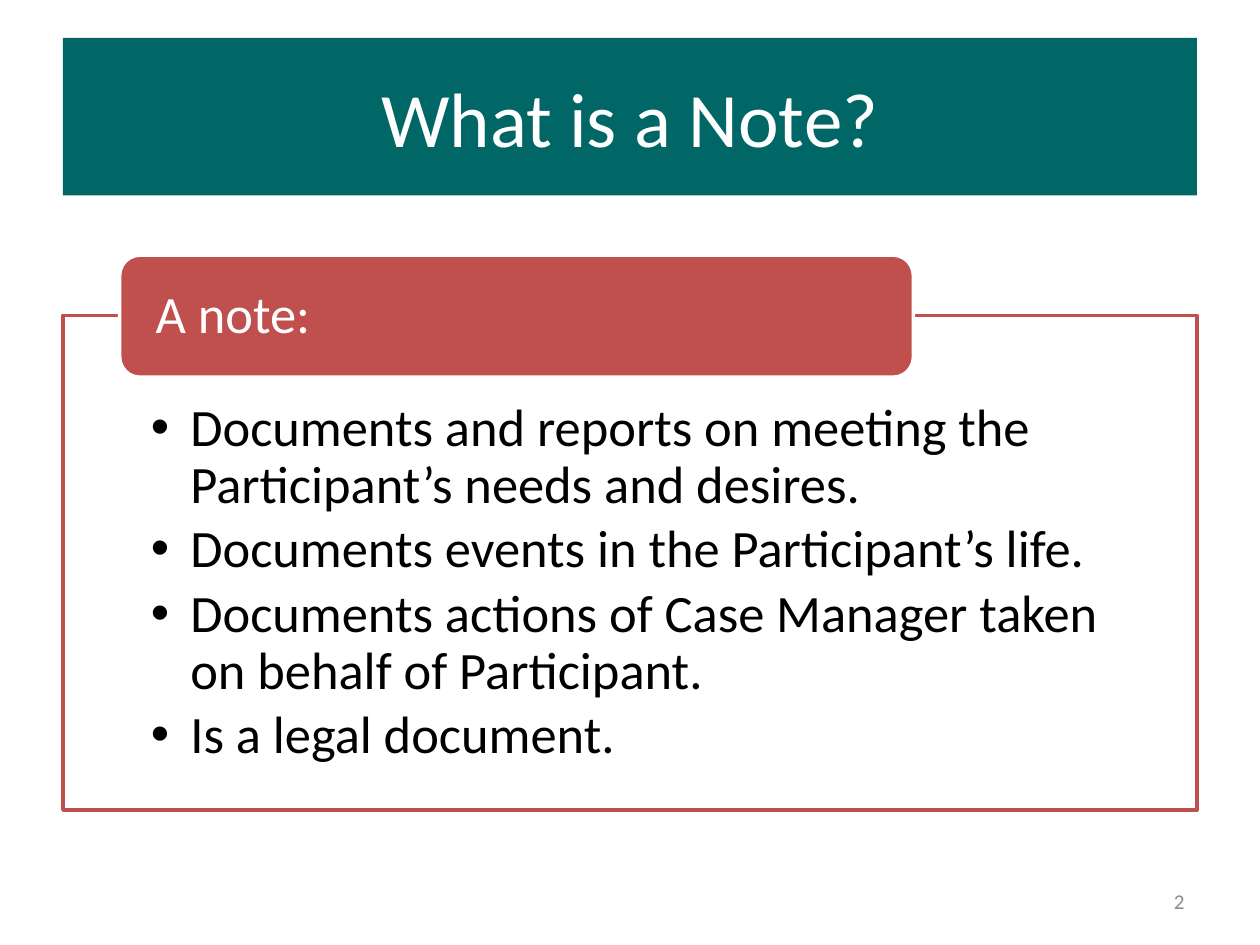
"""Build a slide that defines a note with a titled, bulleted panel."""
from dataclasses import dataclass
from typing import Optional

from lxml.etree import SubElement
from pptx import Presentation
from pptx.dml.color import RGBColor
from pptx.enum.shapes import MSO_SHAPE
from pptx.enum.text import MSO_ANCHOR, PP_ALIGN
from pptx.oxml.ns import qn
from pptx.util import Pt

TEAL = RGBColor(0x00, 0x66, 0x66)
RED = RGBColor(0xC0, 0x50, 0x4D)
WHITE = RGBColor(0xFF, 0xFF, 0xFF)
BLACK = RGBColor(0x00, 0x00, 0x00)
GRAY = RGBColor(0x8C, 0x8C, 0x8C)
FONT = "Calibri"
BULLET_INDENT = 22.5

NOTE_POINTS = (
    "Documents and reports on meeting the Participant’s needs and desires.",
    "Documents events in the Participant’s life.",
    "Documents actions of Case Manager taken on behalf of Participant.",
    "Is a legal document.",
)


@dataclass(frozen=True)
class Box:
    left: float
    top: float
    width: float
    height: float
    fill: RGBColor
    line: Optional[RGBColor] = None
    preset: MSO_SHAPE = MSO_SHAPE.RECTANGLE

    def lengths(self):
        return [Pt(n) for n in (self.left, self.top, self.width, self.height)]


TITLE = Box(36, 21.6, 648, 90, TEAL)
PANEL = Box(36, 180.2, 648, 282.7, WHITE, RED)
HEADING = Box(68.4, 145.8, 453.6, 69.8, RED, WHITE, MSO_SHAPE.ROUNDED_RECTANGLE)


def draw_box(slide, box: Box):
    shape = slide.shapes.add_shape(box.preset, *box.lengths())
    shape.shadow.inherit = False
    shape.fill.solid()
    shape.fill.fore_color.rgb = box.fill
    if box.line is None:
        shape.line.fill.background()
    else:
        shape.line.color.rgb = box.line
        shape.line.width = Pt(2)
    return shape.text_frame


def add_bullet(paragraph) -> None:
    properties = paragraph._p.get_or_add_pPr()
    properties.set("marL", str(Pt(BULLET_INDENT)))
    properties.set("indent", str(-Pt(BULLET_INDENT)))
    SubElement(properties, qn("a:buFont"), typeface="Arial")
    SubElement(properties, qn("a:buChar"), char="•")


def write_text(frame, *lines: str, size: float, color: RGBColor,
               align=PP_ALIGN.LEFT, anchor=MSO_ANCHOR.MIDDLE,
               insets=(7.2, 3.6, 7.2, 3.6), spacing: float = 1,
               after: float = 0, bulleted: bool = False) -> None:
    frame.word_wrap = True
    frame.vertical_anchor = anchor
    (frame.margin_left, frame.margin_top,
     frame.margin_right, frame.margin_bottom) = map(Pt, insets)
    for index, line in enumerate(lines):
        paragraph = frame.add_paragraph() if index else frame.paragraphs[0]
        paragraph.alignment = align
        paragraph.line_spacing = spacing
        paragraph.space_after = Pt(after)
        if bulleted:
            paragraph.level = 1
            add_bullet(paragraph)
        run = paragraph.add_run()
        run.text = line
        run.font.name = FONT
        run.font.size = Pt(size)
        run.font.color.rgb = color


def main() -> None:
    presentation = Presentation()
    presentation.slide_width, presentation.slide_height = Pt(720), Pt(540)
    slide = presentation.slides.add_slide(presentation.slide_layouts[6])

    write_text(draw_box(slide, TITLE), "What is a Note?", size=44, color=WHITE,
               align=PP_ALIGN.CENTER)
    write_text(draw_box(slide, PANEL), *NOTE_POINTS, size=30, color=BLACK,
               anchor=MSO_ANCHOR.TOP, insets=(50.3, 49, 50.3, 16.6),
               spacing=0.9, after=4.5, bulleted=True)
    write_text(draw_box(slide, HEADING), "A note:", size=30, color=WHITE,
               insets=(17.2, 0, 17.2, 0), spacing=0.9)

    page_number = slide.shapes.add_textbox(Pt(516), Pt(500.5), Pt(168), Pt(28.75))
    write_text(page_number.text_frame, "2", size=12, color=GRAY,
               align=PP_ALIGN.RIGHT)

    presentation.save("out.pptx")


if __name__ == "__main__":
    main()
